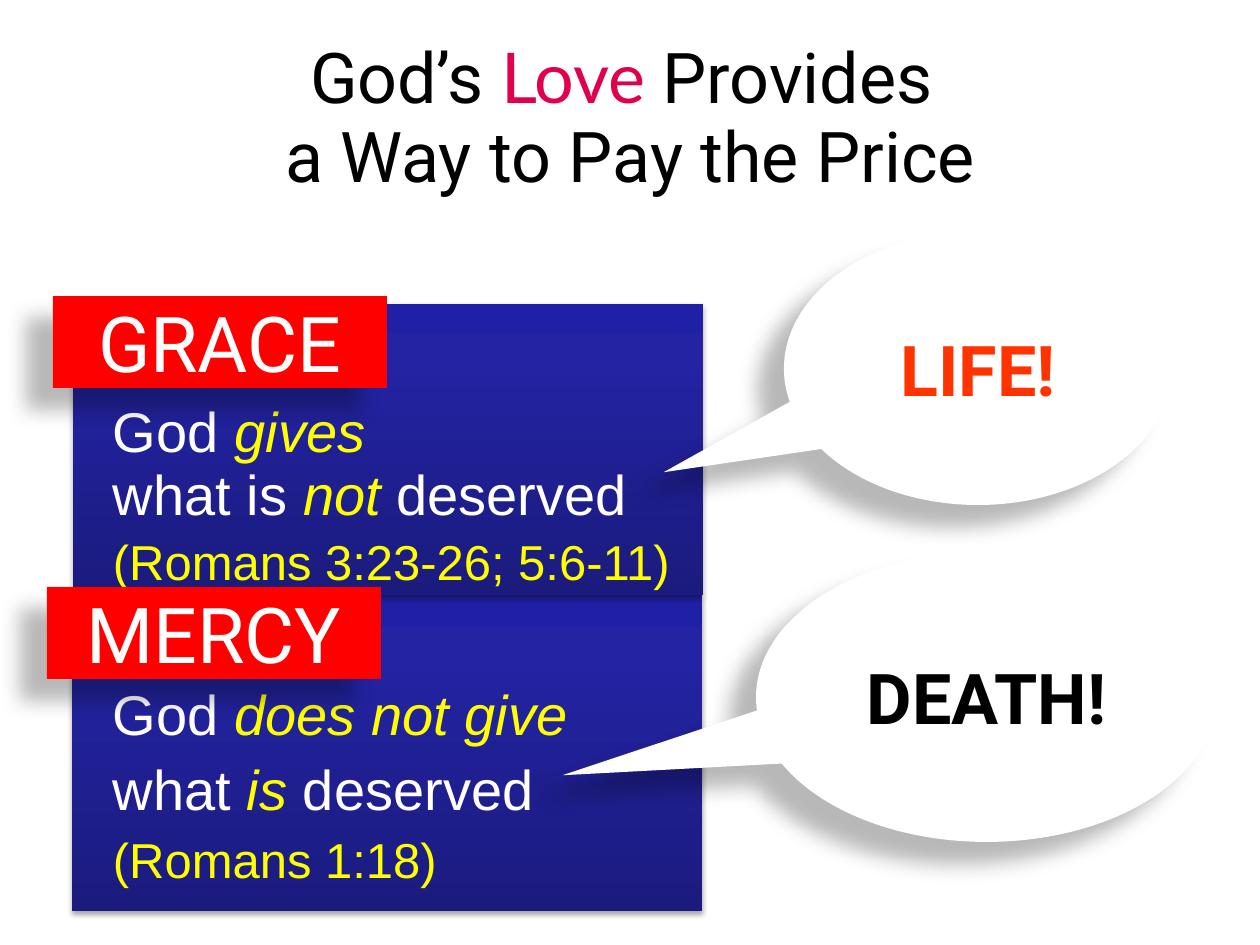
import copy
import pptx
import pptx.util
import pptx.dml.color
import pptx.enum.shapes
import pptx.enum.text
import pptx.oxml
import pptx.oxml.ns

RGB = pptx.dml.color.RGBColor
SHAPE = pptx.enum.shapes.MSO_SHAPE
ALIGN = pptx.enum.text.PP_ALIGN
MIDDLE = pptx.enum.text.MSO_ANCHOR.MIDDLE
Pt = pptx.util.Pt

BLACK, WHITE = RGB(0, 0, 0), RGB(255, 255, 255)
RED, ORANGE = RGB(255, 0, 0), RGB(0xFF, 0x33, 0)
YELLOW, PINK = RGB(255, 255, 0), RGB(0xE0, 0x01, 0x4A)
PANEL_STOPS = [(0, RGB(0x1B, 0x1B, 0x7E)), (0.8, RGB(0x23, 0x23, 0xA3)),
               (1, RGB(0x20, 0x20, 0xA6))]

# Shadows: opacity %, blur pt, distance pt, direction in degrees
SOFT_SHADOW = (35, 3.1, 1.8, 90)
DEEP_SHADOW = (28, 11.8, 19.7, 141)

# Run formats
TITLE = dict(name="Roboto", size=Pt(40), color=BLACK)
LOVE = dict(TITLE, name="Lato", color=PINK)
LABEL = dict(name="Roboto", size=Pt(44), color=WHITE)
PLAIN = dict(name="Arial", size=Pt(32), color=WHITE)
STRESS = dict(PLAIN, color=YELLOW, italic=True)
VERSE = dict(PLAIN, size=Pt(28), color=YELLOW)

# Content; boxes are left, top, width, height in px
TITLE_LINES = [[("God’s", TITLE), (" Love", LOVE), (" Provides ", TITLE)],
               [("a Way to Pay the Price", TITLE)]]
PANELS = [(72, 595, 630, 316), (73, 304, 630, 291)]
LABELS = [("GRACE", (53, 296, 334, 92)), ("MERCY", (47, 587, 334, 92))]
# Text box, space before each line in pt, lines
PASSAGES = [
    ((113, 401, 590, 185), (0, 0, 4.3), [
        [("God ", PLAIN), ("gives", STRESS)],
        [("what is ", PLAIN), ("not", STRESS), (" deserved", PLAIN)],
        [("(Romans 3:23-26; 5:6-11)", VERSE)]]),
    ((113, 684, 590, 200), (0, 6.4, 6.4), [
        [("God ", PLAIN), ("does not give", STRESS)],
        [("what ", PLAIN), ("is", STRESS), (" deserved", PLAIN)],
        [("(Romans 1:18)", VERSE)]]),
]
# Word, colour, box, pointer tip relative to the centre
CALLOUTS = [("LIFE!", ORANGE, (784, 232, 388, 273), (-0.81, 0.38)),
            ("DEATH!", BLACK, (756, 552, 461, 290), (-0.92, 0.27))]


def px(value):
    return round(value * 914400 / 126)


def add_runs(para, runs):
    for text, style in runs:
        span = para.add_run()
        span.text = text
        for key, value in style.items():
            if key == "color":
                span.font.color.rgb = value
            else:
                setattr(span.font, key, value)


def set_frame(frame, **options):
    settings = dict(margin_left=0, margin_top=0, margin_right=0,
                    margin_bottom=0, word_wrap=True,
                    auto_size=pptx.enum.text.MSO_AUTO_SIZE.NONE)
    settings.update(options)
    for key, value in settings.items():
        setattr(frame, key, value)


def add_block(kind, box, shadow, color=None):
    block = page.shapes.add_shape(kind, *map(px, box))
    block.line.fill.background()
    if color is not None:
        block.fill.solid()
        block.fill.fore_color.rgb = color
    block.shadow.inherit = False
    opacity, blur, distance, angle = shadow
    effects = block._element.spPr.find(pptx.oxml.ns.qn("a:effectLst"))
    effects.append(pptx.oxml.parse_xml(
        f'<a:outerShdw {pptx.oxml.ns.nsdecls("a")} blurRad="{Pt(blur)}" '
        f'dist="{Pt(distance)}" dir="{angle * 60000}" rotWithShape="0">'
        f'<a:srgbClr val="{BLACK}"><a:alpha val="{opacity * 1000}"/>'
        '</a:srgbClr></a:outerShdw>'))
    return block


def add_centred(block, text, style, wrap):
    set_frame(block.text_frame, vertical_anchor=MIDDLE, word_wrap=wrap)
    para = block.text_frame.paragraphs[0]
    para.alignment = ALIGN.CENTER
    add_runs(para, [(text, style)])


deck = pptx.Presentation()
deck.slide_width, deck.slide_height = px(1260), px(945)
page = deck.slides.add_slide(deck.slide_layouts[5])

# Title
title = page.shapes.title
title.left, title.top, title.width, title.height = map(px, (0, 40, 1260, 158))
set_frame(title.text_frame, vertical_anchor=MIDDLE)
heading = title.text_frame.paragraphs[0]
heading.alignment, heading.line_spacing = ALIGN.CENTER, 0.95
for number, runs in enumerate(TITLE_LINES):
    if number:
        heading.add_line_break()
    add_runs(heading, runs)

# Blue panels, dark at the bottom
for box in PANELS:
    panel = add_block(SHAPE.RECTANGLE, box, SOFT_SHADOW)
    panel.fill.gradient()
    panel.fill.gradient_angle = 90
    stop_list = next(panel._element.spPr.iter(pptx.oxml.ns.qn("a:gsLst")))
    stop_list.append(copy.deepcopy(stop_list[-1]))
    for stop, (position, color) in zip(panel.fill.gradient_stops, PANEL_STOPS):
        stop.position = position
        stop.color.rgb = color

# Passages
for box, gaps, lines in PASSAGES:
    frame = page.shapes.add_textbox(*map(px, box)).text_frame
    set_frame(frame)
    for number, (gap, runs) in enumerate(zip(gaps, lines)):
        para = frame.add_paragraph() if number else frame.paragraphs[0]
        para.line_spacing = 0.95
        para.space_before = Pt(gap)
        add_runs(para, runs)

# Speech balloons
for word, color, box, tip in CALLOUTS:
    balloon = add_block(SHAPE.OVAL_CALLOUT, box, DEEP_SHADOW, WHITE)
    balloon.adjustments[0], balloon.adjustments[1] = tip
    add_centred(balloon, word, dict(TITLE, color=color, bold=True), True)

# Red labels
for word, box in LABELS:
    label = add_block(SHAPE.RECTANGLE, box, DEEP_SHADOW, RED)
    add_centred(label, word, LABEL, False)

deck.save("out.pptx")
